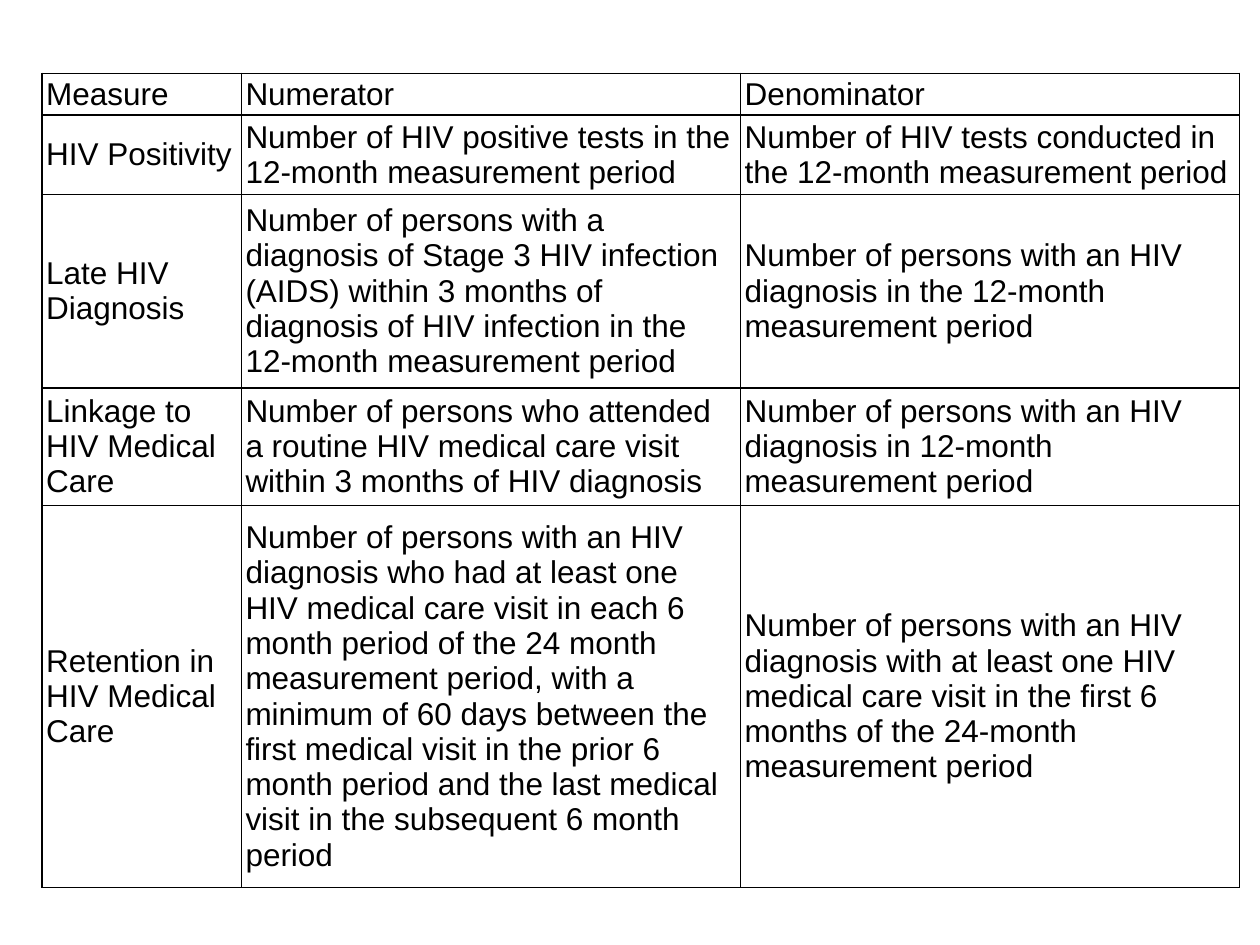
from lxml.etree import SubElement
from pptx import Presentation
from pptx.dml.color import RGBColor
from pptx.enum.text import MSO_ANCHOR
from pptx.oxml.ns import qn
from pptx.util import Cm, Pt

COLORS = {"text": "000000", "border": "000000"}
COLUMN_WIDTHS = [4.02, 10.06, 10.06]
ROW_HEIGHTS = [0.84, 1.6, 3.9, 2.37, 7.7]
MEASURES = [
    ("Measure", "Numerator", "Denominator"),
    (
        "HIV Positivity",
        "Number of HIV positive tests in the 12-month measurement period",
        "Number of HIV tests conducted in the 12-month measurement period",
    ),
    (
        "Late HIV Diagnosis",
        "Number of persons with a diagnosis of Stage 3 HIV infection (AIDS) within "
        "3 months of diagnosis of HIV infection in the 12-month measurement period",
        "Number of persons with an HIV diagnosis in the 12-month measurement period",
    ),
    (
        "Linkage to HIV Medical Care",
        "Number of persons who attended a routine HIV medical care visit within "
        "3 months of HIV diagnosis",
        "Number of persons with an HIV diagnosis in 12-month measurement period",
    ),
    (
        "Retention in HIV Medical Care",
        "Number of persons with an HIV diagnosis who had at least one HIV medical "
        "care visit in each 6 month period of the 24 month measurement period, with "
        "a minimum of 60 days between the first medical visit in the prior 6 month "
        "period and the last medical visit in the subsequent 6 month period",
        "Number of persons with an HIV diagnosis with at least one HIV medical care "
        "visit in the first 6 months of the 24‐month measurement period",
    ),
]


class SlideBuilder:
    """Hold the style and current slide, and add elements to it."""

    def __init__(self, slide, font="Arial", size=18):
        self.slide = slide
        self.font = font
        self.size = size

    def table(self, left, top, widths, heights, rows):
        frame = self.slide.shapes.add_table(
            len(heights), len(widths), Cm(left), Cm(top), Cm(sum(widths)), Cm(sum(heights))
        )
        table = frame.table
        table.first_row = table.horz_banding = False
        for column, width in zip(table.columns, widths):
            column.width = Cm(width)
        for row, height, texts in zip(table.rows, heights, rows):
            row.height = Cm(height)
            for cell, text in zip(row.cells, texts):
                self.cell(cell, text)

    def cell(self, cell, text):
        cell.text = text
        cell.vertical_anchor = MSO_ANCHOR.MIDDLE
        cell.margin_left = cell.margin_right = Cm(0.08)
        cell.margin_top = cell.margin_bottom = Cm(0.05)
        font = cell.text_frame.paragraphs[0].font
        font.name = self.font
        font.size = Pt(self.size)
        font.color.rgb = RGBColor.from_string(COLORS["text"])
        self.borders(cell)
        cell.fill.background()

    def borders(self, cell):
        properties = cell._tc.get_or_add_tcPr()
        for side in ("a:lnL", "a:lnR", "a:lnT", "a:lnB"):
            line = SubElement(properties, qn(side), w=str(Pt(1)))
            fill = SubElement(line, qn("a:solidFill"))
            SubElement(fill, qn("a:srgbClr"), val=COLORS["border"])


def main():
    presentation = Presentation()
    presentation.slide_width = Cm(25.4)
    presentation.slide_height = Cm(19.05)
    builder = SlideBuilder(presentation.slides.add_slide(presentation.slide_layouts[6]))
    builder.table(0.85, 1.48, COLUMN_WIDTHS, ROW_HEIGHTS, MEASURES)
    presentation.save("out.pptx")


if __name__ == "__main__":
    main()
